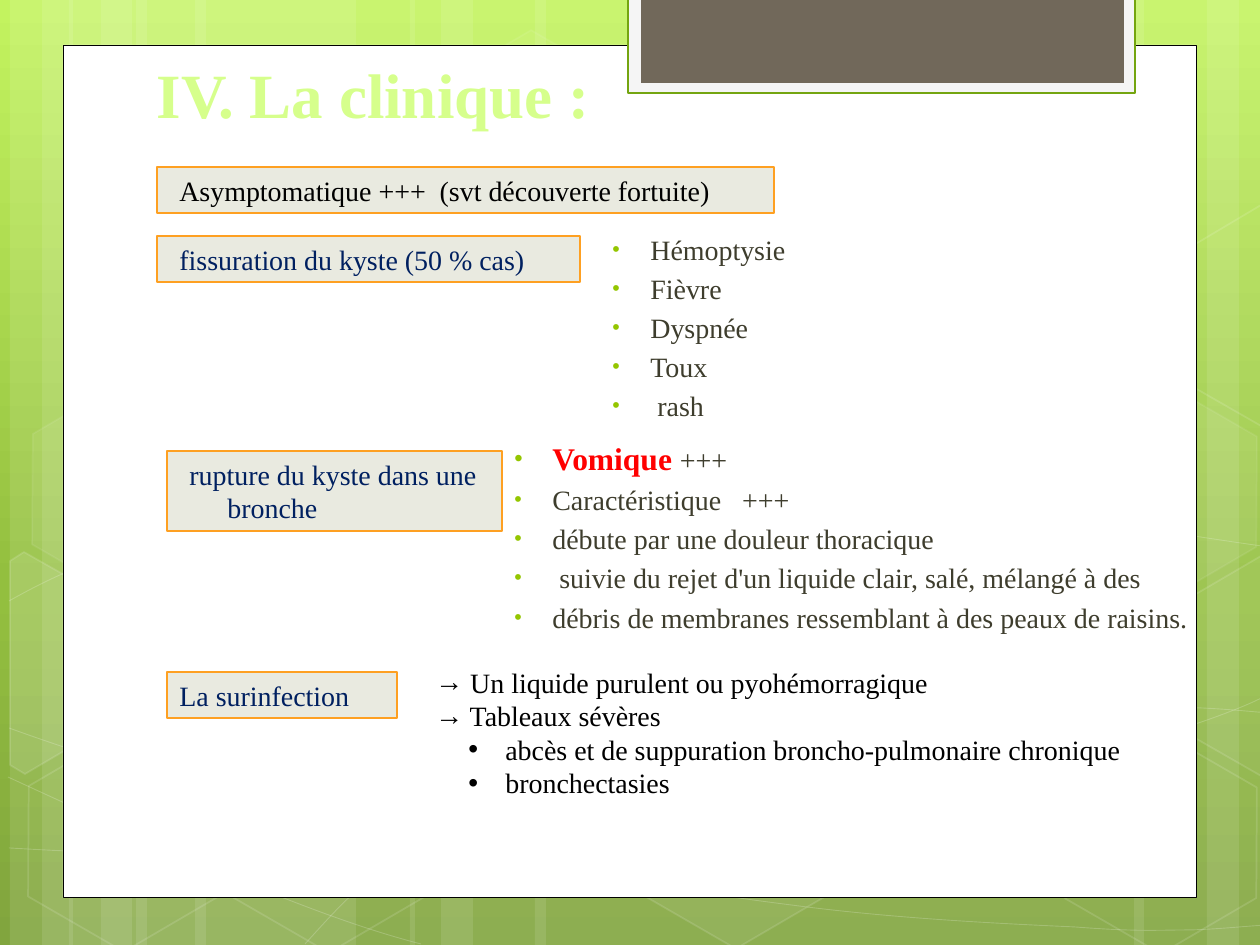
from copy import deepcopy

from lxml.etree import SubElement
from pptx import Presentation
from pptx.dml.color import RGBColor
from pptx.enum.shapes import MSO_SHAPE
from pptx.enum.text import MSO_ANCHOR, PP_ALIGN
from pptx.oxml.ns import qn
from pptx.util import Pt

PX = 914400 / 126
WIDTH, HEIGHT = 1260, 945
FONT = "Times New Roman"
HANGING = (48, -38)
COLORS = {
    "white": "FFFFFF", "black": "000000", "title": "D6FF8C", "olive": "3E3D2D",
    "navy": "002060", "red": "FF0000", "bullet": "94C600", "label": "E9EAE0",
    "label_edge": "FEA022", "tab": "F5F5F5", "tab_edge": "74A510", "tab_core": "71685A",
    "sky_top": "C3F35F", "sky_middle": "93BF3F", "sky_bottom": "81A53E",
}
SKY = [("sky_top", 0), ("sky_middle", 0.62), ("sky_bottom", 1)]

STRIPES = [(136, 220), (10, 63), (42, 105), (195, 220), (69, 63), (101, 105),
           (924, 220), (1207, 63), (1134, 105), (535, 389), (410, 63), (441, 105)]
# Each curve is a chain of cubic Bézier segments: anchor, two controls, anchor...
CURVES = [
    [(9, 848), (77, 852), (145, 855), (239, 854), (334, 853), (451, 851), (577, 838),
     (703, 825), (882, 801), (998, 777), (1113, 753), (1231, 716), (1269, 694)],
    [(9, 601), (45, 581), (82, 562), (152, 543), (224, 524), (326, 496), (437, 488),
     (549, 479), (685, 478), (824, 488), (963, 498), (1193, 537), (1269, 547)],
    [(8, 777), (160, 847), (311, 916), (421, 944)],
    [(9, 728), (48, 742), (88, 756), (161, 776), (234, 795), (344, 827), (450, 848),
     (554, 869), (687, 892), (791, 905), (896, 919), (1008, 924), (1075, 927),
     (1140, 932), (1158, 930), (1191, 930), (1223, 929), (1246, 926), (1269, 925)],
    [(305, 944), (328, 919), (350, 893), (381, 871), (411, 848), (454, 822), (489, 805),
     (524, 788), (546, 780), (592, 767), (638, 754), (722, 737), (766, 728),
     (811, 719), (818, 719), (857, 717), (896, 714), (958, 709), (1000, 708),
     (1044, 707), (1116, 708), (1116, 708), (1144, 708), (1173, 708), (1201, 708),
     (1223, 709), (1245, 711), (1256, 712), (1268, 713), (1264, 712), (1268, 713)],
]
# left, top, fill opacity, line opacity (percent)
HEXAGONS = [(421, 45, 4, 8), (626, 742, 6, 12), (14, 745, 0, 12), (18, 393, 7, 8),
            (219, 746, 0, 12), (949, 571, 10, 12), (1051, 747, 0, 12), (1051, 396, 7, 8)]
CUT_HEXAGONS = [
    ([(10, 561), (24, 552), (121, 607), (120, 718), (25, 774), (10, 765)], 10),
    ([(1167, 611), (1261, 556), (1271, 562), (1271, 772), (1263, 777), (1167, 722)], 4),
    ([(1167, 261), (1261, 205), (1273, 212), (1271, 422), (1263, 427), (1167, 372)], 0),
]


def px(*lengths):
    return [round(length * PX) for length in lengths]


def rgb(name):
    return RGBColor.from_string(COLORS[name])


def paint(fill, color, opacity=100):
    if not color or not opacity:
        fill.background()
        return
    fill.solid()
    fill.fore_color.rgb = rgb(color)
    if opacity < 100:
        tint = fill._xPr.find(".//" + qn("a:srgbClr"))
        SubElement(tint, qn("a:alpha"), val=str(opacity * 1000))


def style(shape, fill=None, opacity=100, line=None, width=1, line_opacity=100):
    shape.shadow.inherit = False
    paint(shape.fill, fill, opacity)
    paint(shape.line.fill, line, line_opacity)
    if line:
        shape.line.width = Pt(width)
    return shape


def add_rect(slide, box, **look):
    return style(slide.shapes.add_shape(MSO_SHAPE.RECTANGLE, *px(*box)), **look)


def add_outline(slide, points, close, **look):
    builder = slide.shapes.build_freeform(*points[0], scale=PX)
    builder.add_line_segments(points[1:], close=close)
    return style(builder.convert_to_shape(), **look)


def add_curve(slide, chain, **look):
    """Draw the chain as lines, then join every three of them into one Bézier segment."""
    shape = add_outline(slide, chain, False, **look)
    lines = list(shape._element.iter(qn("a:lnTo")))
    for start in range(0, len(lines), 3):
        bezier = SubElement(lines[start].getparent(), qn("a:cubicBezTo"))
        for line in lines[start:start + 3]:
            bezier.append(line[0])
            line.getparent().remove(line)


def set_font(font, color, size=16, bold=False):
    font.name, font.size, font.bold = FONT, Pt(size), bold
    font.color.rgb = rgb(color)


def format_paragraph(paragraph, indent=(0, 0), spaced=False, bullet=None, accent=False):
    """Set indents, 20 % space before, and a bullet, coloured and small if accent."""
    props = paragraph._p.get_or_add_pPr()
    margin, first = px(*indent)
    props.set("marL", str(margin))
    props.set("indent", str(first))
    if spaced:
        SubElement(SubElement(props, qn("a:spcBef")), qn("a:spcPct"), val="20000")
    if accent:
        SubElement(SubElement(props, qn("a:buClr")), qn("a:srgbClr"), val=COLORS["bullet"])
        SubElement(props, qn("a:buSzPct"), val="76000")
    if bullet:
        SubElement(props, qn("a:buFont"), typeface="Arial")
        SubElement(props, qn("a:buChar"), char=bullet)


def add_label(slide, box, text, color="navy", hanging=True):
    frame = add_rect(slide, box, fill="label", line="label_edge", width=0.75).text_frame
    frame.word_wrap = True
    frame.vertical_anchor = MSO_ANCHOR.TOP
    paragraph = frame.paragraphs[0]
    paragraph.text = text
    paragraph.alignment = PP_ALIGN.LEFT
    format_paragraph(paragraph, HANGING if hanging else (0, 0), spaced=hanging)
    set_font(paragraph.font, color)


def add_list(slide, box, items, color):
    """Write items of (text, paragraph format); return the paragraphs."""
    frame = slide.shapes.add_textbox(*px(*box)).text_frame
    frame.word_wrap = True
    for index, (text, layout) in enumerate(items):
        paragraph = frame.add_paragraph() if index else frame.paragraphs[0]
        paragraph.text = text
        format_paragraph(paragraph, **layout)
        set_font(paragraph.font, color)
    return frame.paragraphs


def add_symptoms(slide, box, symptoms):
    layout = dict(indent=HANGING, spaced=True, bullet="•", accent=True)
    return add_list(slide, box, [(symptom, layout) for symptom in symptoms], "olive")


def add_background(slide):
    fill = slide.background.fill
    fill.gradient()
    fill.gradient_angle = 270
    stops = slide._element.find(".//" + qn("a:gsLst"))
    stops.append(deepcopy(stops[-1]))
    for stop, (color, position) in zip(fill.gradient_stops, SKY):
        stop.color.rgb = rgb(color)
        stop.position = position
    for left, width in STRIPES:
        add_rect(slide, (left, 0, width, HEIGHT), fill="white", opacity=10)
    for chain in CURVES:
        add_curve(slide, chain, line="white", width=0.5, line_opacity=20)
    for left, top, opacity, line_opacity in HEXAGONS:
        hexagon = slide.shapes.add_shape(MSO_SHAPE.HEXAGON, *px(left, top, 220, 192))
        hexagon.adjustments[0], hexagon.adjustments[1] = 0.285, 1.155
        hexagon.rotation = 30
        style(hexagon, "white", opacity, "white", 1, line_opacity)
    for points, opacity in CUT_HEXAGONS:
        add_outline(slide, points, True, fill="white", opacity=opacity,
                    line="white", line_opacity=12)


def add_panel(slide):
    add_rect(slide, (63, 45, 1134, 853), fill="white", line="black", width=0.5)
    add_rect(slide, (628, -3, 507, 96), fill="tab", line="tab_edge", width=1.25)
    add_rect(slide, (641, -3, 483, 86), fill="tab_core")


def set_title(slide, text):
    title = slide.shapes.title
    slide.shapes._spTree.append(title._element)  # in front of the panel
    title.left, title.top, title.width, title.height = px(144, 54, 968, 83)
    frame = title.text_frame
    frame.text = text
    frame.vertical_anchor = MSO_ANCHOR.BOTTOM
    frame.paragraphs[0].alignment = PP_ALIGN.LEFT
    set_font(frame.paragraphs[0].font, "title", 36, True)


def main():
    deck = Presentation()
    deck.slide_width, deck.slide_height = px(WIDTH, HEIGHT)
    slide = deck.slides.add_slide(deck.slide_layouts[5])
    add_background(slide)
    add_panel(slide)
    set_title(slide, "IV. La clinique :")

    add_symptoms(slide, (590, 226, 315, 209),
                 ["Hémoptysie", "Fièvre", "Dyspnée", "Toux", " rash"])
    vomique = add_symptoms(slide, (492, 433, 726, 214), [
        "Vomique ", "Caractéristique   +++", "débute par une douleur thoracique",
        " suivie du rejet d'un liquide clair, salé, mélangé à des",
        "débris de membranes ressemblant à des peaux de raisins."])[0]
    set_font(vomique.runs[0].font, "red", 18, True)
    vomique.add_run().text = "+++"

    arrow = dict(bullet="→")
    dot = dict(indent=(63, -30), bullet="•")
    add_list(slide, (423, 659, 748, 183), [
        (" Un liquide purulent ou pyohémorragique", arrow), (" Tableaux sévères", arrow),
        (" abcès et de suppuration broncho-pulmonaire chronique", dot),
        (" bronchectasies", dot)], "black")

    add_label(slide, (167, 672, 230, 46), "La surinfection", hanging=False)
    add_label(slide, (157, 236, 423, 46), "fissuration du kyste (50 % cas)")
    add_label(slide, (167, 451, 335, 80), "rupture du kyste dans une bronche")
    add_label(slide, (157, 167, 617, 46), "Asymptomatique +++  (svt découverte fortuite)", "black")
    deck.save("out.pptx")


if __name__ == "__main__":
    main()
